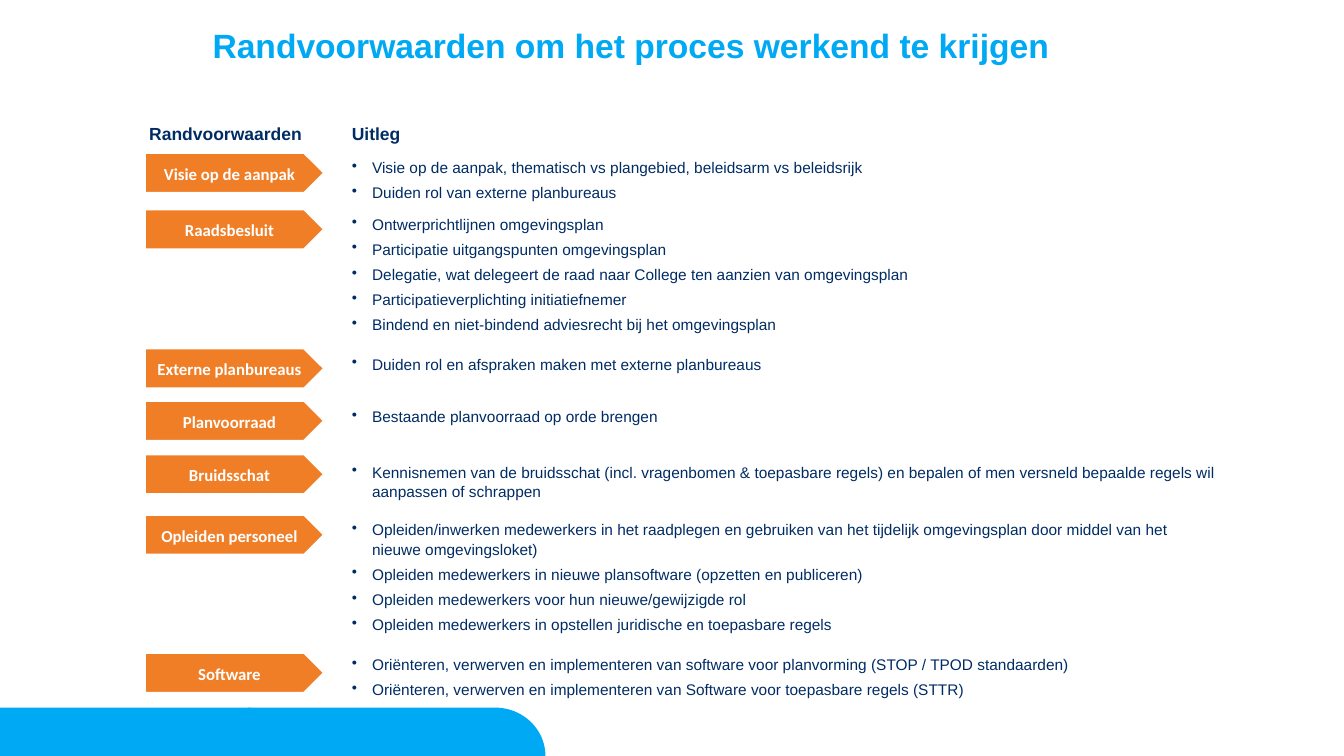
from dataclasses import dataclass
from math import cos, pi, sin

from pptx import Presentation
from pptx.dml.color import RGBColor
from pptx.enum.shapes import MSO_SHAPE
from pptx.enum.text import MSO_ANCHOR, MSO_AUTO_SIZE, PP_ALIGN
from pptx.oxml.ns import qn
from pptx.shapes.base import BaseShape
from pptx.slide import Slide
from pptx.text.text import TextFrame, _Paragraph
from pptx.util import Inches, Pt

SKY = RGBColor(0x00, 0xA9, 0xF3)
NAVY = RGBColor(0x00, 0x2C, 0x64)
ORANGE = RGBColor(0xF0, 0x7E, 0x26)
WHITE = RGBColor(0xFF, 0xFF, 0xFF)

LEFT, TAG_W, TAG_H = 1.44, 1.77, 0.39
NOTE_X = 3.45
PAD = 0.04
SPACING = 1.06


@dataclass
class Topic:
    name: str
    top: float
    note_top: float
    height: float
    notes: list[str]
    width: float = 8.69


TOPICS = [
    Topic("Visie op de aanpak", 1.52, 1.52, 0.53, [
        "Visie op de aanpak, thematisch vs plangebied, beleidsarm vs beleidsrijk",
        "Duiden rol van externe planbureaus",
    ]),
    Topic("Raadsbesluit", 2.08, 2.08, 1.32, [
        "Ontwerprichtlijnen omgevingsplan",
        "Participatie uitgangspunten omgevingsplan",
        "Delegatie, wat delegeert de raad naar College ten aanzien van omgevingsplan",
        "Participatieverplichting initiatiefnemer",
        "Bindend en niet-bindend adviesrecht bij het omgevingsplan",
    ]),
    Topic("Externe planbureaus", 3.46, 3.47, 0.28, [
        "Duiden rol en afspraken maken met externe planbureaus",
    ], 7.93),
    Topic("Planvoorraad", 3.98, 3.99, 0.28, [
        "Bestaande planvoorraad op orde brengen",
    ], 7.93),
    Topic("Bruidsschat", 4.51, 4.54, 0.47, [
        "Kennisnemen van de bruidsschat (incl. vragenbomen & toepasbare regels) "
        "en bepalen of men versneld bepaalde regels wil aanpassen of schrappen",
    ]),
    Topic("Opleiden personeel", 5.11, 5.11, 1.48, [
        "Opleiden/inwerken medewerkers in het raadplegen en gebruiken van het "
        "tijdelijk omgevingsplan door middel van het nieuwe omgevingsloket)",
        "Opleiden medewerkers in nieuwe plansoftware (opzetten en publiceren)",
        "Opleiden medewerkers voor hun nieuwe/gewijzigde rol",
        "Opleiden medewerkers in opstellen juridische en toepasbare regels",
    ]),
    Topic("Software", 6.48, 6.45, 0.53, [
        "Oriënteren, verwerven en implementeren van software voor planvorming "
        "(STOP / TPOD standaarden)",
        "Oriënteren, verwerven en implementeren van Software voor toepasbare regels (STTR)",
    ]),
]


def paint(shape: BaseShape, color: RGBColor) -> None:
    shape.shadow.inherit = False
    shape.fill.solid()
    shape.fill.fore_color.rgb = color


def write(para: _Paragraph, text: str, size: float, color: RGBColor,
          bold: bool = True, face: str = "Arial") -> None:
    run = para.add_run()
    run.text = text
    font = run.font
    font.name, font.size, font.bold = face, Pt(size), bold
    font.color.rgb = color


def pad(frame: TextFrame) -> None:
    frame.margin_left = frame.margin_right = Inches(PAD)
    frame.margin_top = frame.margin_bottom = Inches(PAD)


def add_box(slide: Slide, x: float, y: float, w: float, h: float) -> TextFrame:
    frame = slide.shapes.add_textbox(Inches(x), Inches(y), Inches(w), Inches(h)).text_frame
    frame.word_wrap = True
    return frame


def add_label(slide: Slide, x: float, text: str) -> None:
    """Add a column heading."""
    frame = add_box(slide, x, 1.17, TAG_W, 0.3)
    pad(frame)
    frame.auto_size = MSO_AUTO_SIZE.SHAPE_TO_FIT_TEXT
    para = frame.paragraphs[0]
    para.line_spacing = SPACING
    write(para, text, 12.5, NAVY)


def add_tag(slide: Slide, topic: Topic) -> None:
    tag = slide.shapes.add_shape(MSO_SHAPE.PENTAGON, Inches(LEFT), Inches(topic.top),
                                 Inches(TAG_W), Inches(TAG_H))
    paint(tag, ORANGE)
    tag.line.color.rgb = WHITE
    tag.line.width = Pt(1)
    frame = tag.text_frame
    pad(frame)
    frame.word_wrap = True
    frame.vertical_anchor = MSO_ANCHOR.MIDDLE
    para = frame.paragraphs[0]
    para.alignment = PP_ALIGN.CENTER
    para.line_spacing = SPACING
    write(para, topic.name, 12, WHITE, face="Calibri")


def add_notes(slide: Slide, topic: Topic) -> None:
    frame = add_box(slide, NOTE_X, topic.note_top, topic.width, topic.height)
    pad(frame)
    frame.auto_size = MSO_AUTO_SIZE.SHAPE_TO_FIT_TEXT
    for i, note in enumerate(topic.notes):
        para = frame.add_paragraph() if i else frame.paragraphs[0]
        para.level = 1
        para.line_spacing = SPACING
        para.space_before = Pt(4 if i else 0)
        props = para._p.get_or_add_pPr()
        props.set("marL", str(Inches(0.2)))
        props.set("indent", str(Inches(-0.2)))
        mark = props.makeelement(qn("a:buChar"), {"char": "•"})
        props.append(mark)
        write(para, note, 11, NAVY, bold=False)


def add_foot(slide: Slide, x: float, right: float) -> None:
    """Add a bottom band whose upper right corner is a quarter ellipse."""
    top, base, bend, steps = 7.02, 7.5, 0.5, 24
    angles = [pi / 2 * (1 - i / steps) for i in range(steps + 1)]
    curve = [(right - bend + bend * cos(a), base - (base - top) * sin(a)) for a in angles]
    points = [(Inches(px), Inches(py)) for px, py in [(x, top), *curve]]
    form = slide.shapes.build_freeform(Inches(x), Inches(base), scale=1.0)
    form.add_line_segments(points, close=True)
    band = form.convert_to_shape()
    paint(band, SKY)
    band.line.fill.background()


def main() -> None:
    deck = Presentation()
    deck.slide_width, deck.slide_height = Inches(13.33), Inches(7.5)
    slide = deck.slides.add_slide(deck.slide_layouts[6])
    for x, right in [(0, 2.94), (2.46, 5.41)]:
        add_foot(slide, x, right)
    title = add_box(slide, 2.01, 0.24, 10.13, 0.78).paragraphs[0]
    title.line_spacing = 0.9
    write(title, "Randvoorwaarden om het proces werkend te krijgen", 24, SKY)
    add_label(slide, LEFT, "Randvoorwaarden")
    add_label(slide, NOTE_X, "Uitleg")
    for topic in TOPICS:
        add_tag(slide, topic)
        add_notes(slide, topic)
    deck.save("out.pptx")


if __name__ == "__main__":
    main()
